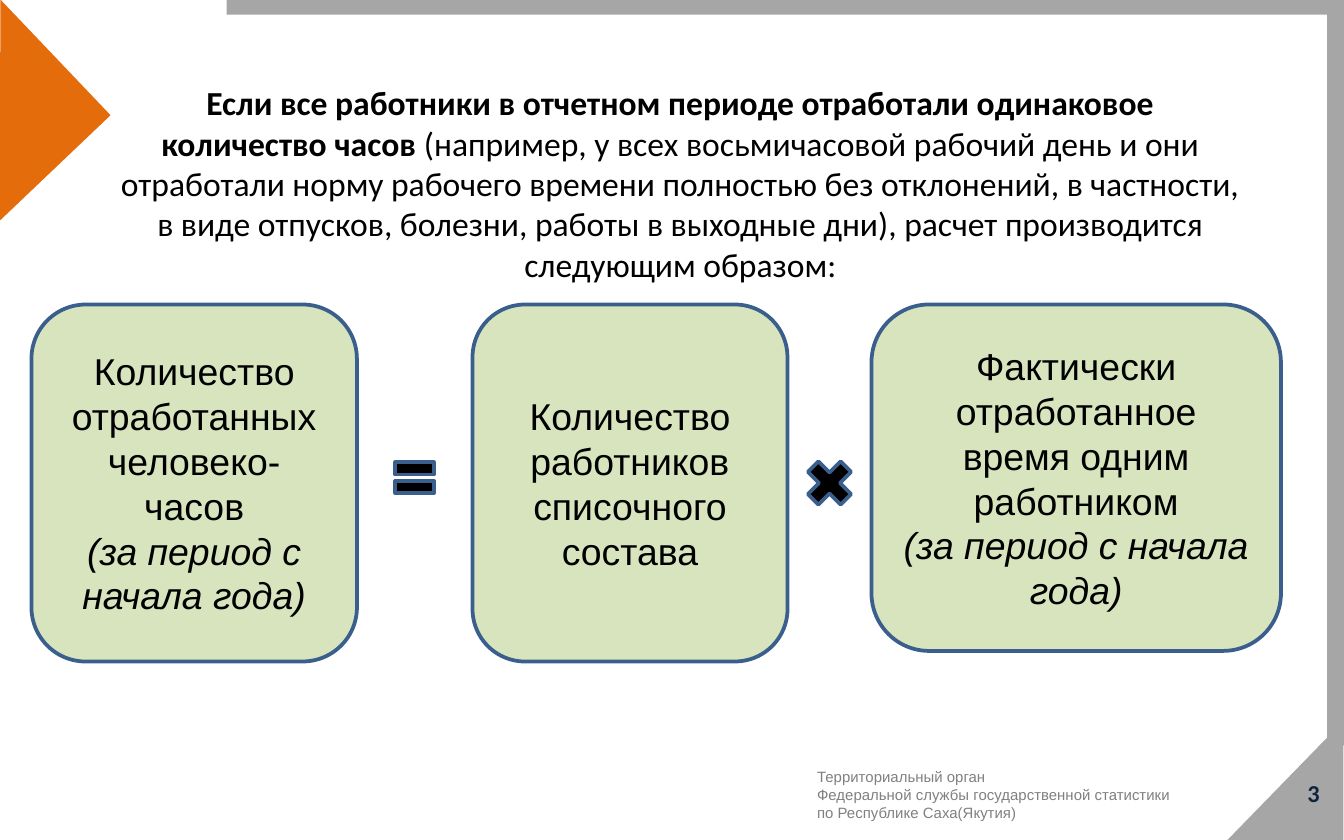
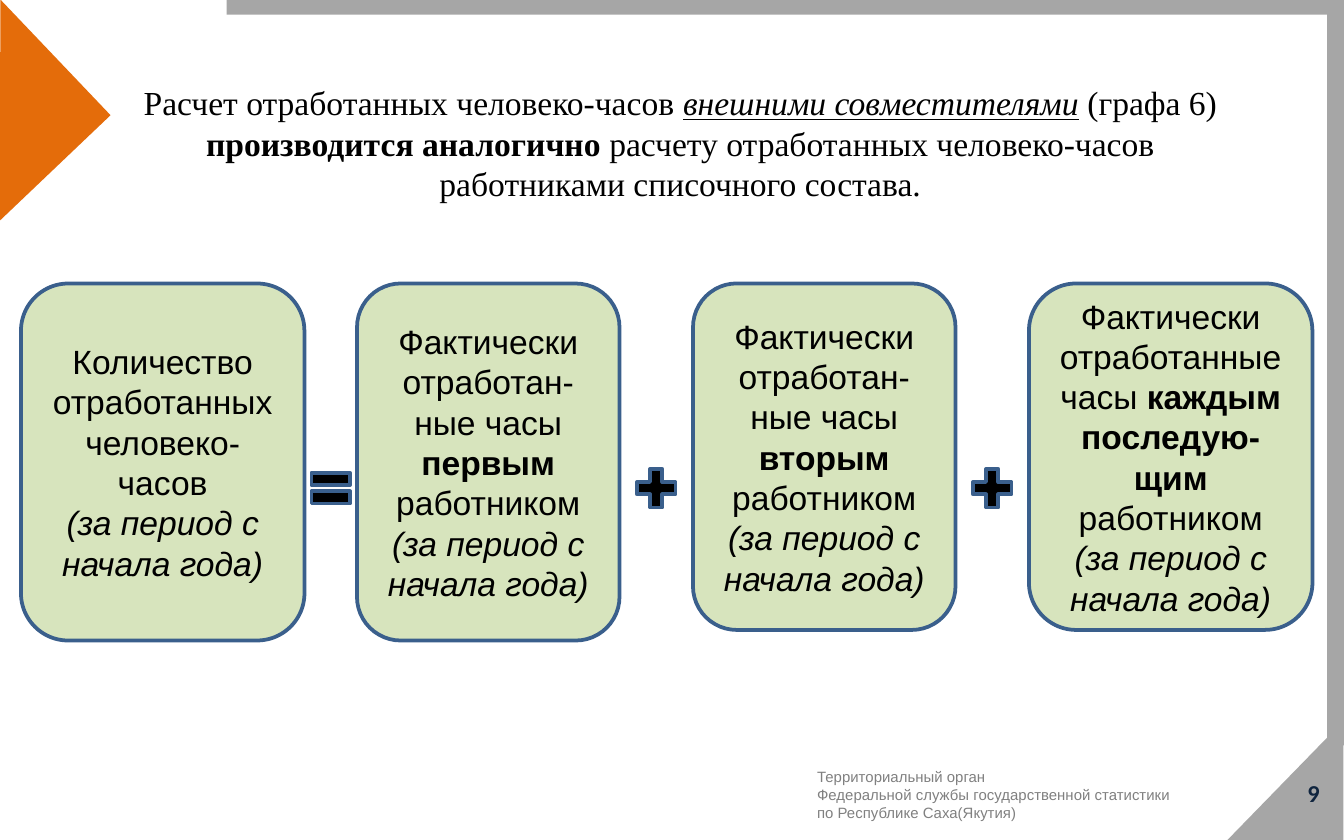
from pptx import Presentation
from pptx.dml.color import RGBColor
from pptx.enum.shapes import MSO_SHAPE as S
from pptx.enum.text import MSO_ANCHOR, PP_ALIGN
from pptx.util import Inches, Pt

COLS, ROWS = 64, 40
UNIT = Inches(10) / COLS
GREY, ORANGE, GREEN, BLUE = "A6A6A6", "E46C0A", "D7E4BD", "3A5F8C"
BLACK, NAVY, NOTE = "000000", "0F243E", "808080"


def draw(slide, kind, at, fill=None, line=None, turn=0):
    """Add a shape, or a text box if kind is None; at is in grid units."""
    place = [round(n * UNIT) for n in at]
    if kind is None:
        return slide.shapes.add_textbox(*place)
    shape = slide.shapes.add_shape(kind, *place)
    shape.shadow.inherit = False
    shape.rotation = turn
    shape.fill.solid()
    shape.fill.fore_color.rgb = RGBColor.from_string(fill)
    if line:
        shape.line.color.rgb = RGBColor.from_string(line)
        shape.line.width = Pt(2)
    else:
        shape.line.fill.background()
    return shape


def write(shape, paras, size, face="Arial", color=BLACK, align=PP_ALIGN.CENTER,
          anchor=MSO_ANCHOR.MIDDLE, inset=None):
    """Each paragraph lists (text, marks); marks are letters out of b, i, u."""
    frame = shape.text_frame
    frame.word_wrap = True
    frame.vertical_anchor = anchor
    if inset:
        frame.margin_left = frame.margin_right = Inches(inset)
        frame.margin_top = frame.margin_bottom = Inches(inset / 2)
    for n, runs in enumerate(paras):
        para = frame.add_paragraph() if n else frame.paragraphs[0]
        para.alignment = align
        for text, marks in runs:
            run = para.add_run()
            run.text = text
            font = run.font
            font.name, font.size = face, Pt(size)
            font.color.rgb = RGBColor.from_string(color)
            font.bold, font.italic = "b" in marks, "i" in marks
            font.underline = "u" in marks


BANDS = [
    (S.RECTANGLE, (10.8, 0, 52.4, 0.7), GREY, 0),
    (S.RECTANGLE, (63.2, 0, 0.8, 35.5), GREY, 0),
    (S.RIGHT_TRIANGLE, (58.35, 34.4, 5.7, 5.55), GREY, 270),
    (S.RIGHT_TRIANGLE, (-3.8, 1.6, 7.6, 7.3), ORANGE, 226.4),
]
FOOTER = [
    [("Территориальный орган", "")],
    [("Федеральной службы государственной статистики", "")],
    [("по Республике Саха(Якутия)", "")],
]
PERIOD = [("(за период с начала года)", "i")]
TOTAL = [[("Количество отработанных человеко-часов", "")], PERIOD]


def hours(start, who):
    return [[(start + " часы ", ""), (who, "b"), (" работником", "")], PERIOD]


PAGES = [
    dict(
        number="3", face="Calibri", size=20, top=14.5,
        title=[("Если все работники в отчетном периоде отработали одинаковое "
                "количество часов", "b"),
               (" (например, у всех восьмичасовой рабочий день и они отработали "
                "норму рабочего времени полностью без отклонений, в частности, "
                "в виде отпусков, болезни, работы в выходные дни), расчет "
                "производится следующим образом:", "")],
        # left, width, height, text
        boxes=[
            (1.5, 15.5, 17, TOTAL),
            (22.5, 15, 17, [[("Количество работников списочного состава", "")]]),
            (41.5, 19.5, 16.5,
             [[("Фактически отработанное время одним работником", "")], PERIOD]),
        ],
        # kind, left, top, side
        signs=[(S.MATH_EQUAL, 18.5, 21.5, 2.5), (S.MATH_MULTIPLY, 38, 21.5, 3)],
    ),
    dict(
        number="9", face="Times New Roman", size=18, top=13.5,
        title=[("Расчет отработанных человеко-часов ", ""),
               ("внешними совместителями", "iu"), (" (графа 6) ", ""),
               ("производится аналогично", "b"),
               (" расчету отработанных человеко-часов работниками списочного "
                "состава.", "")],
        boxes=[
            (1, 13.5, 17, TOTAL),
            (17, 12.5, 17, hours("Фактически отработан-ные", "первым")),
            (33, 12.5, 16.5, hours("Фактически отработан-ные", "вторым")),
            (49, 13.5, 16.5, hours("Фактически отработанные", "каждым последую-щим")),
        ],
        signs=[(S.MATH_EQUAL, 14.5, 22, 2.5), (S.MATH_PLUS, 30, 22, 2.5),
               (S.MATH_PLUS, 46, 22, 2.5)],
    ),
]

deck = Presentation()
deck.slide_width, deck.slide_height = round(COLS * UNIT), round(ROWS * UNIT)

for page in PAGES:
    slide = deck.slides.add_slide(deck.slide_layouts[6])
    for kind, at, fill, turn in BANDS:
        draw(slide, kind, at, fill, turn=turn)
    write(draw(slide, None, (38.4, 36.8, 23.7, 2.1)), FOOTER, 8, color=NOTE,
          align=PP_ALIGN.LEFT, inset=0.08)
    write(draw(slide, None, (60.75, 36.35, 2.6, 2.8)), [[(page["number"], "b")]],
          13, "Calibri", NAVY, PP_ALIGN.RIGHT, inset=0.08)
    for left, width, height, text in page["boxes"]:
        box = draw(slide, S.ROUNDED_RECTANGLE, (left, page["top"], width, height),
                   GREEN, BLUE)
        write(box, text, page["size"])
    for kind, left, top, side in page["signs"]:
        draw(slide, kind, (left, top, side, side), BLACK, BLUE)
    write(draw(slide, None, (5.1, 3.6, 54.6, 6.9)), [page["title"]], 18,
          page["face"], anchor=MSO_ANCHOR.TOP)

deck.save("out.pptx")
